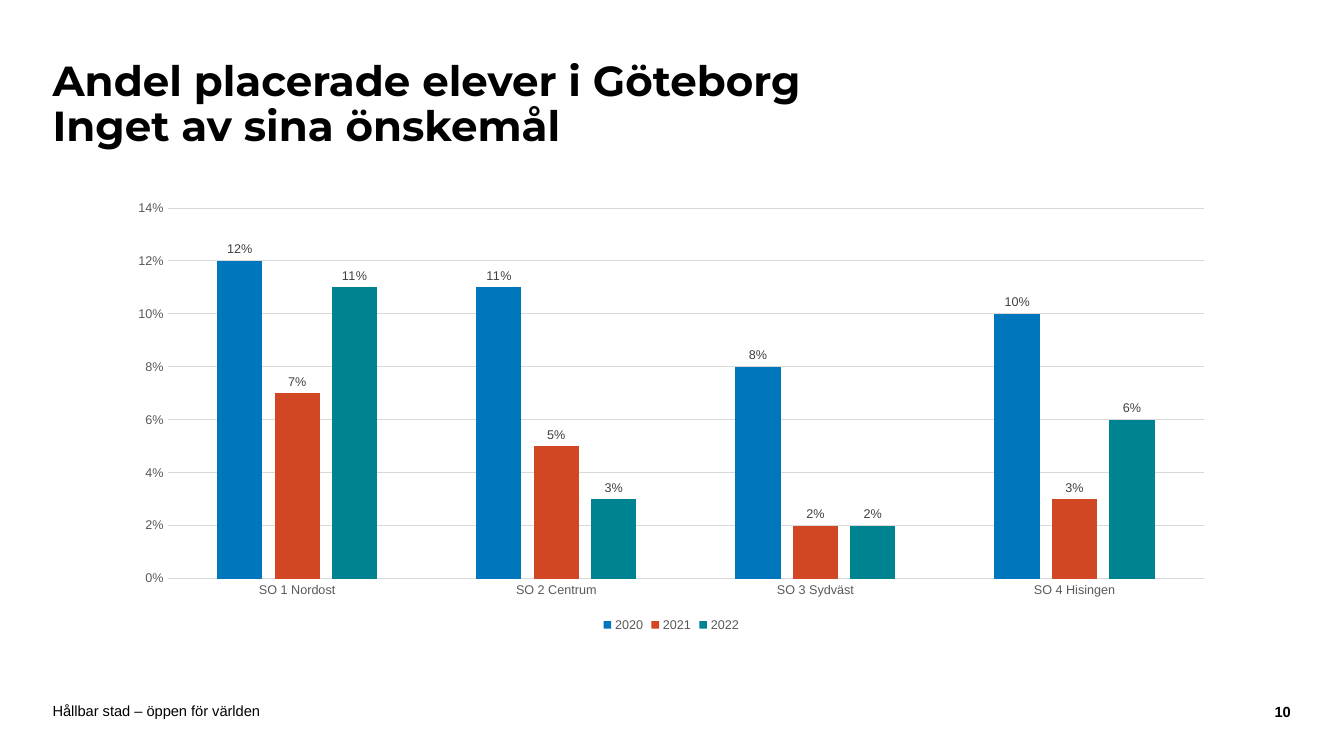
"""Build a slide with a clustered column chart of placed pupils per school area."""
from pptx import Presentation
from pptx.chart.data import CategoryChartData
from pptx.dml.color import RGBColor
from pptx.enum.chart import XL_CHART_TYPE, XL_LABEL_POSITION, XL_LEGEND_POSITION, XL_TICK_MARK
from pptx.enum.text import MSO_ANCHOR, MSO_AUTO_SIZE, PP_ALIGN
from pptx.util import Pt

BLACK, AXIS_GREY, LABEL_GREY, GRID_GREY = "000000", "595959", "404040", "D9D9D9"
AREAS = ["SO 1 Nordost", "SO 2 Centrum", "SO 3 Sydväst", "SO 4 Hisingen"]
YEARS = {
    "2020": ("0077BC", [0.12, 0.11, 0.08, 0.10]),
    "2021": ("D24723", [0.07, 0.05, 0.02, 0.03]),
    "2022": ("008391", [0.11, 0.03, 0.02, 0.06]),
}


def rgb(code):
    return RGBColor.from_string(code)


class SlideBuilder:
    heading_font = "Montserrat"
    body_font = "Arial"

    def __init__(self, slide):
        self.slide = slide

    def style(self, font, size, color, bold=False, name=body_font):
        font.name, font.size, font.bold = name, Pt(size), bold
        font.color.rgb = rgb(color)

    def frame(self, shape, inset=0):
        frame = shape.text_frame
        frame.word_wrap = True
        frame.auto_size = MSO_AUTO_SIZE.NONE
        frame.vertical_anchor = MSO_ANCHOR.MIDDLE
        frame.margin_left = frame.margin_right = 0
        frame.margin_top = frame.margin_bottom = Pt(inset)
        return frame

    def title(self, text, left, top, width, height):
        heading = self.slide.shapes.title
        heading.left, heading.top = Pt(left), Pt(top)
        heading.width, heading.height = Pt(width), Pt(height)
        frame = self.frame(heading, 3.6)
        frame.text = text
        line = frame.paragraphs[0]
        line.alignment = PP_ALIGN.LEFT
        line.line_spacing = 0.9
        self.style(line.font, 30, BLACK, True, self.heading_font)

    def text(self, text, left, top, width, height, bold=False, align=PP_ALIGN.LEFT):
        box = self.slide.shapes.add_textbox(Pt(left), Pt(top), Pt(width), Pt(height))
        frame = self.frame(box)
        frame.text = text
        line = frame.paragraphs[0]
        line.alignment = align
        self.style(line.font, 10.5, BLACK, bold)

    def columns(self, categories, series, left, top, width, height):
        data = CategoryChartData(number_format="0%")
        data.categories = categories
        for year, (_, shares) in series.items():
            data.add_series(year, shares)
        chart = self.slide.shapes.add_chart(
            XL_CHART_TYPE.COLUMN_CLUSTERED, Pt(left), Pt(top), Pt(width), Pt(height), data
        ).chart
        chart.has_title = False
        self.style(chart.font, 10, BLACK)
        chart.has_legend = True
        chart.legend.position = XL_LEGEND_POSITION.BOTTOM
        chart.legend.include_in_layout = False
        self.style(chart.legend.font, 9, AXIS_GREY)
        self.axes(chart.category_axis, chart.value_axis)

        plot = chart.plots[0]
        plot.gap_width, plot.overlap = 219, -27
        plot.vary_by_categories = False
        for bars, (color, _) in zip(plot.series, series.values()):
            bars.format.fill.solid()
            bars.format.fill.fore_color.rgb = rgb(color)
            bars.invert_if_negative = False
            labels = bars.data_labels
            labels.show_value = True
            labels.position = XL_LABEL_POSITION.OUTSIDE_END
            labels.number_format, labels.number_format_is_linked = "0%", False
            self.style(labels.font, 9, LABEL_GREY)

    def axes(self, areas, shares):
        for axis in (areas, shares):
            axis.major_tick_mark = axis.minor_tick_mark = XL_TICK_MARK.NONE
            self.style(axis.tick_labels.font, 9, AXIS_GREY)
        shares.minimum_scale, shares.maximum_scale, shares.major_unit = 0, 0.14, 0.02
        shares.tick_labels.number_format = "0%"
        shares.tick_labels.number_format_is_linked = False
        shares.format.line.fill.background()
        for line in (areas.format.line, shares.major_gridlines.format.line):
            line.color.rgb = rgb(GRID_GREY)
            line.width = Pt(0.75)


def main():
    deck = Presentation()
    deck.slide_width, deck.slide_height = Pt(960), Pt(540)
    builder = SlideBuilder(deck.slides.add_slide(deck.slide_layouts[5]))
    builder.title("Andel placerade elever i Göteborg\vInget av sina önskemål", 37.5, 30, 722, 91)
    builder.columns(AREAS, YEARS, 83, 137, 793, 317.5)
    builder.text("Hållbar stad – öppen för världen", 37.5, 502, 680, 11.5)
    builder.text("10", 876, 502.5, 46, 11.5, True, PP_ALIGN.RIGHT)
    deck.save("out.pptx")


if __name__ == "__main__":
    main()
